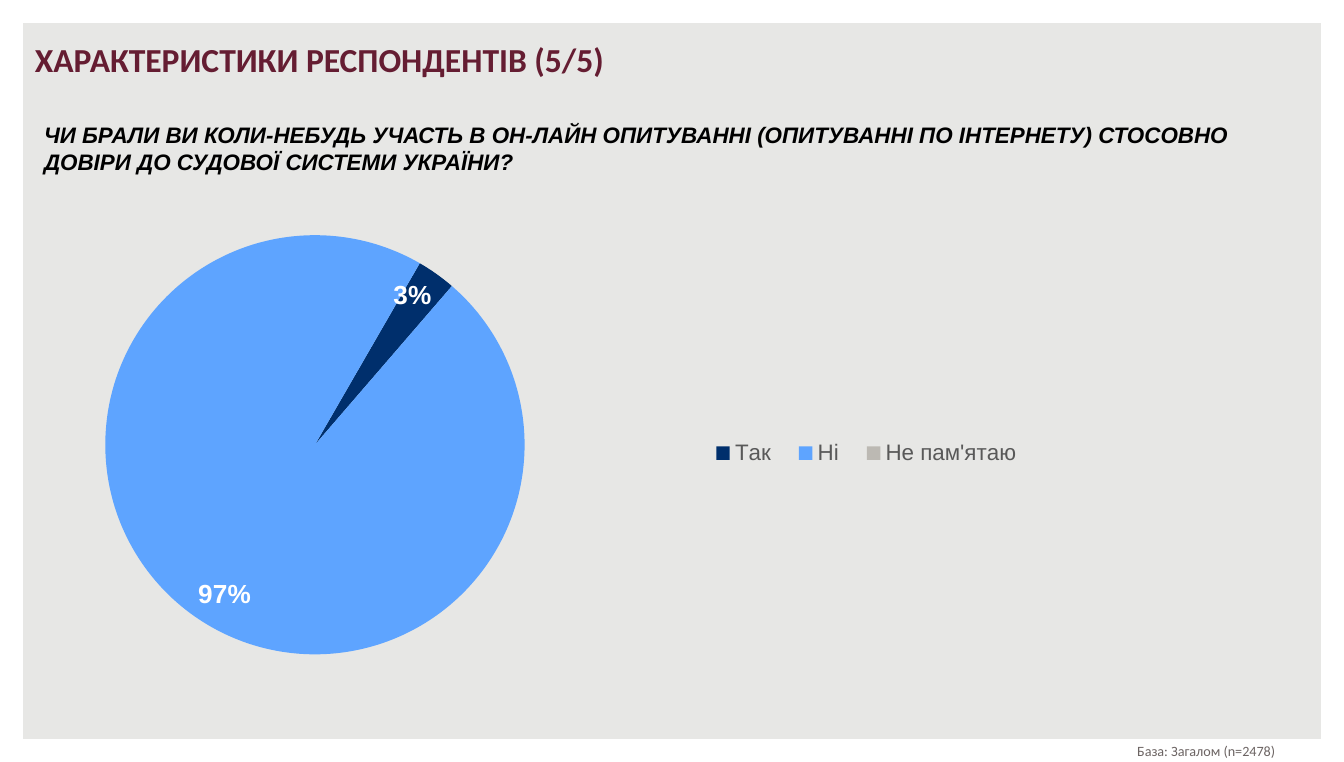
from pptx import Presentation
from pptx.chart.data import CategoryChartData
from pptx.dml.color import RGBColor
from pptx.enum.chart import XL_CHART_TYPE, XL_LABEL_POSITION, XL_LEGEND_POSITION
from pptx.enum.shapes import MSO_SHAPE
from pptx.enum.text import MSO_ANCHOR, PP_ALIGN
from pptx.oxml import parse_xml
from pptx.oxml.ns import nsdecls
from pptx.util import Inches, Pt

BLACK = RGBColor(0x00, 0x00, 0x00)
WHITE = RGBColor(0xFF, 0xFF, 0xFF)
PAPER = RGBColor(0xE7, 0xE7, 0xE5)
BURGUNDY = RGBColor(0x65, 0x1D, 0x32)
NAVY = RGBColor(0x00, 0x2F, 0x6C)
SKY = RGBColor(0x5E, 0xA4, 0xFF)
STONE = RGBColor(0xBC, 0xB9, 0xB3)
LEGEND_GRAY = RGBColor(0x59, 0x59, 0x59)
NOTE_GRAY = RGBColor(0x6C, 0x64, 0x63)


def format_font(font, size, color, name="Arial", bold=False, italic=False):
    font.size = Pt(size)
    font.color.rgb = color
    font.name = name
    font.bold = bold
    font.italic = italic


def place(shape, left, top, width, height):
    shape.left, shape.top = Inches(left), Inches(top)
    shape.width, shape.height = Inches(width), Inches(height)


def write_text(box, text, align=PP_ALIGN.LEFT, anchor=MSO_ANCHOR.TOP, **font_format):
    frame = box.text_frame
    frame.word_wrap = True
    frame.vertical_anchor = anchor
    para = frame.paragraphs[0]
    para.alignment = align
    span = para.add_run()
    span.text = text
    format_font(span.font, **font_format)


def add_text(page, bounds, text, **text_format):
    box = page.shapes.add_textbox(*map(Inches, bounds))
    write_text(box, text, **text_format)


def add_frame(page, width, height):
    frame = page.shapes.add_shape(MSO_SHAPE.FRAME, 0, 0, width, height)
    frame.adjustments[0] = 0.03
    frame.shadow.inherit = False
    frame.fill.solid()
    frame.fill.fore_color.rgb = WHITE
    frame.line.fill.background()


def set_layout(parent, index, left, top, width, height, target=""):
    for layout in parent.xpath("./c:layout"):
        parent.remove(layout)
    parent.insert(index, parse_xml(
        f'<c:layout {nsdecls("c")}><c:manualLayout>{target}'
        '<c:xMode val="edge"/><c:yMode val="edge"/>'
        f'<c:x val="{left}"/><c:y val="{top}"/>'
        f'<c:w val="{width}"/><c:h val="{height}"/>'
        '</c:manualLayout></c:layout>'))


def add_pie(page, bounds, answers):
    chart_data = CategoryChartData(number_format="0%")
    chart_data.categories = [name for name, share, color in answers]
    chart_data.add_series("Series 1", [share for name, share, color in answers])
    chart = page.shapes.add_chart(
        XL_CHART_TYPE.PIE, *map(Inches, bounds), chart_data).chart
    format_font(chart.font, 10, BLACK, name="Calibri")
    chart.has_title = False
    chart.has_legend = True
    legend = chart.legend
    legend.position = XL_LEGEND_POSITION.RIGHT
    legend.include_in_layout = False
    format_font(legend.font, 12, LEGEND_GRAY)

    plot = chart.plots[0]
    plot.vary_by_categories = True
    series = plot.series[0]
    for index, (name, share, color) in enumerate(answers):
        fill = series.points[index].format.fill
        fill.solid()
        fill.fore_color.rgb = color
    labels = series.data_labels
    labels.show_value = True
    labels.number_format = "0%"
    labels.number_format_is_linked = False
    labels.position = XL_LABEL_POSITION.INSIDE_END
    format_font(labels.font, 14, WHITE, bold=True)
    smallest = series.points[len(answers) - 1].data_label
    format_font(smallest.font, 14, BLACK, bold=True)
    smallest.position = XL_LABEL_POSITION.OUTSIDE_END

    root = chart.element
    pie = root.xpath(".//c:pieChart")[0]
    for angle in pie.xpath("./c:firstSliceAng"):
        pie.remove(angle)
    pie.append(parse_xml(f'<c:firstSliceAng {nsdecls("c")} val="30"/>'))
    set_layout(root.xpath(".//c:plotArea")[0], 0, 0.01, 0.02, 0.43, 1,
               target='<c:layoutTarget val="inner"/>')
    set_layout(root.xpath(".//c:legend")[0], 1, 0.56, 0.47, 0.3, 0.1)


def main():
    deck = Presentation()
    deck.slide_width, deck.slide_height = Inches(10), Inches(5.67)
    page = deck.slides.add_slide(deck.slide_layouts[5])
    page.background.fill.solid()
    page.background.fill.fore_color.rgb = PAPER
    add_frame(page, deck.slide_width, deck.slide_height)

    title = page.shapes.title
    place(title, 0.16, 0.24, 9.36, 0.51)
    write_text(title, "ХАРАКТЕРИСТИКИ РЕСПОНДЕНТІВ (5/5)",
               size=18, color=BURGUNDY, name="Calibri", bold=True)
    add_text(page, (0.23, 0.85, 9.23, 0.5),
             "ЧИ БРАЛИ ВИ КОЛИ-НЕБУДЬ УЧАСТЬ В ОН-ЛАЙН ОПИТУВАННІ "
             "(ОПИТУВАННІ ПО ІНТЕРНЕТУ) СТОСОВНО ДОВІРИ ДО СУДОВОЇ "
             "СИСТЕМИ УКРАЇНИ?",
             size=12, color=BLACK, bold=True, italic=True)
    add_pie(page, (0.44, 1.75, 8.46, 3.12),
            [("Так", 0.03, NAVY), ("Ні", 0.97, SKY), ("Не пам'ятаю", 0, STONE)])
    add_text(page, (8.1, 5.47, 1.75, 0.23), "База: Загалом (n=2478)",
             align=PP_ALIGN.CENTER, anchor=MSO_ANCHOR.MIDDLE,
             size=7.6, color=NOTE_GRAY, name="Calibri")
    deck.save("out.pptx")


if __name__ == "__main__":
    main()
